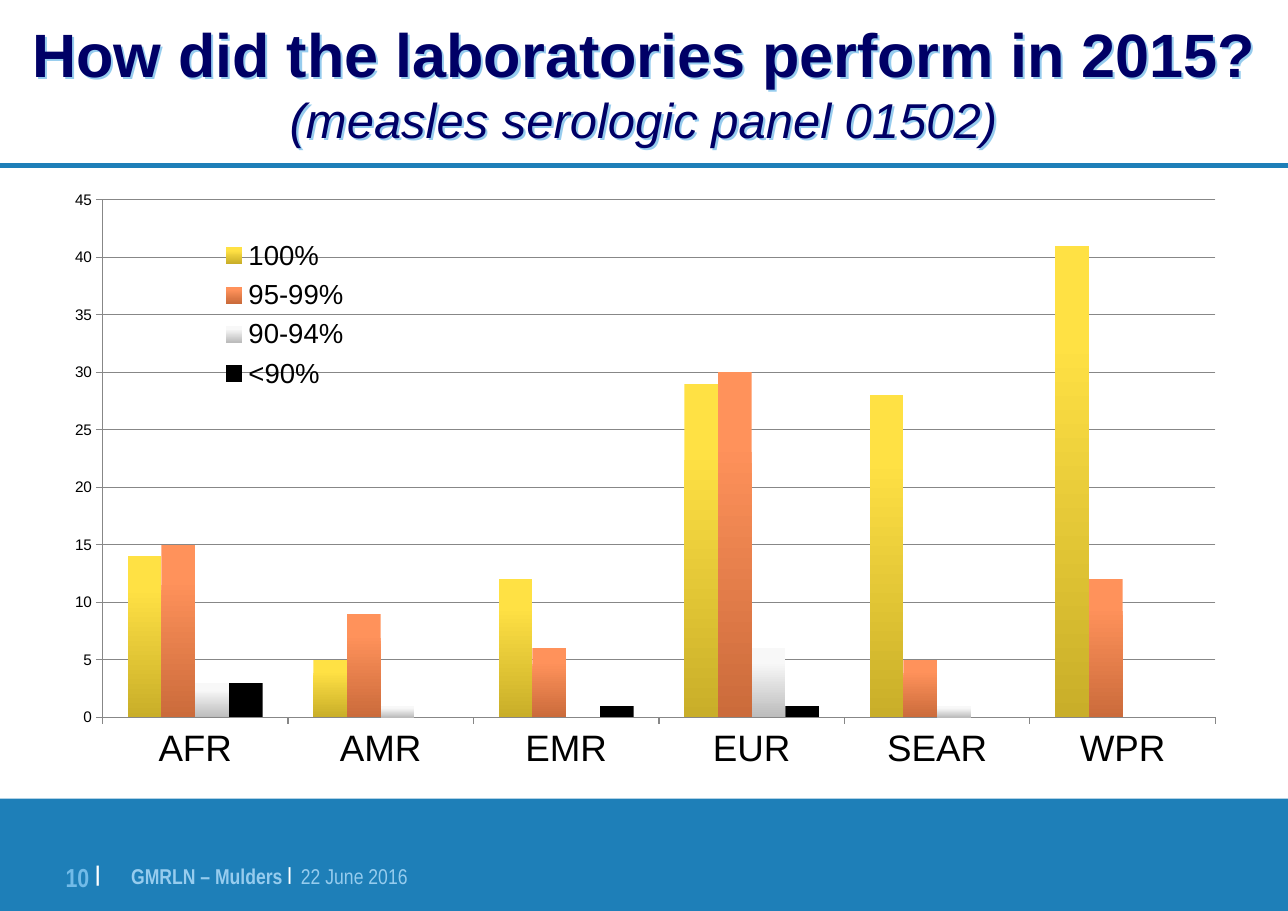
"""Build the slide on 2015 laboratory performance for the measles serologic panel."""
from dataclasses import dataclass, field

from lxml.etree import SubElement
from pptx import Presentation
from pptx.chart.data import CategoryChartData
from pptx.dml.color import RGBColor
from pptx.enum.chart import XL_CHART_TYPE as ChartType, XL_TICK_MARK as TickMark
from pptx.enum.shapes import MSO_CONNECTOR as Connector, MSO_SHAPE as Preset
from pptx.enum.text import MSO_ANCHOR as Anchor, MSO_AUTO_SIZE as AutoSize, PP_ALIGN as Align
from pptx.oxml.ns import qn
from pptx.util import Pt

WIDTH, HEIGHT = 841.68, 595.44
BLUE, PALE_BLUE, NUMBER_BLUE = "1E7FB8", "96CCEE", "72BBE8"
NAVY, WHITE, BLACK, GREY = "000066", "FFFFFF", "000000", "878787"
REGIONS = ["AFR", "AMR", "EMR", "EUR", "SEAR", "WPR"]


@dataclass
class Run:
    text: str
    size: float
    color: str
    raised: int = 0
    style: dict = field(default_factory=dict)


@dataclass
class FooterText:
    box: tuple
    align: Align
    runs: list
    tab: float = 0


@dataclass
class ScoreBand:
    name: str
    counts: list
    top_color: str
    bottom_color: str


NARROW = {"name": "Arial Narrow", "bold": True}
TITLE_RUNS = [
    Run("How did the laboratories perform in 2015?", 40, NAVY, style={"name": "Arial", "bold": True}),
    Run("(measles serologic panel 01502)", 32, NAVY,
        style={"name": "Arial", "bold": False, "italic": True}),
]
FOOTER_TEXTS = [
    FooterText((85.68, 558, 390.96, 37.44), Align.LEFT, [
        Run("GMRLN – Mulders ", 14, PALE_BLUE, style=NARROW),
        Run("|", 20, WHITE, 12, NARROW),
        Run("\t22 June 2016", 14, PALE_BLUE, style=NARROW | {"bold": False}),
    ], tab=111),
    FooterText((33.12, 555.84, 32.4, 28.8), Align.RIGHT, [
        Run("10 ", 17, NUMBER_BLUE, style=NARROW),
        Run("|", 24, WHITE, 14, NARROW),
    ]),
]
SCORE_BANDS = [
    ScoreBand("100%", [14, 5, 12, 29, 28, 41], "FFE144", "C9AE29"),
    ScoreBand("95-99%", [15, 9, 6, 30, 5, 12], "FF925B", "CB6B3B"),
    ScoreBand("90-94%", [3, 1, 0, 6, 1, 0], "F8F8F8", "BCBCBC"),
    ScoreBand("<90%", [3, 0, 1, 1, 0, 0], BLACK, BLACK),
]


def rgb(color: str) -> RGBColor:
    return RGBColor.from_string(color)


def points(*lengths: float) -> list:
    return [Pt(length) for length in lengths]


def set_attributes(target, values: dict) -> None:
    for name, value in values.items():
        setattr(target, name, value)


def add_run(paragraph, item: Run) -> None:
    run = paragraph.add_run()
    run.text = item.text
    set_attributes(run.font, {"size": Pt(item.size), **item.style})
    run.font.color.rgb = rgb(item.color)
    if item.raised:
        run._r.get_or_add_rPr().set("baseline", str(item.raised * 1000))


def clear_margins(frame) -> None:
    set_attributes(frame, {"margin_left": 0, "margin_right": 0, "margin_top": 0,
                           "margin_bottom": 0, "word_wrap": True, "auto_size": AutoSize.NONE})


def place(shape, box: tuple) -> None:
    set_attributes(shape, dict(zip(("left", "top", "width", "height"), points(*box))))


def add_title(slide) -> None:
    title = slide.shapes.title
    place(title, (0, 0, WIDTH, 107.28))
    frame = title.text_frame
    clear_margins(frame)
    frame.vertical_anchor = Anchor.MIDDLE
    paragraph = frame.paragraphs[0]
    paragraph.alignment = Align.CENTER
    heading, subheading = TITLE_RUNS
    add_run(paragraph, heading)
    paragraph.add_line_break()
    add_run(paragraph, subheading)
    effects = SubElement(title._element.spPr, qn("a:effectLst"))
    shadow = SubElement(effects, qn("a:outerShdw"), dist=str(Pt(2)), dir="2700000", algn="ctr")
    SubElement(shadow, qn("a:srgbClr"), val=PALE_BLUE)


def add_bands(slide) -> None:
    rule = slide.shapes.add_connector(Connector.STRAIGHT, *points(0, 108, WIDTH, 108))
    rule.line.color.rgb = rgb(BLUE)
    rule.line.width = Pt(3)
    SubElement(rule._element.spPr, qn("a:effectLst"))
    footer = slide.shapes.add_shape(Preset.RECTANGLE, *points(0, 522, WIDTH, HEIGHT - 522))
    footer.shadow.inherit = False
    footer.fill.solid()
    footer.fill.fore_color.rgb = rgb(BLUE)
    footer.line.fill.background()


def add_footer_text(slide, item: FooterText) -> None:
    frame = slide.shapes.add_textbox(*points(*item.box)).text_frame
    clear_margins(frame)
    paragraph = frame.paragraphs[0]
    paragraph.alignment = item.align
    if item.tab:
        tabs = SubElement(paragraph._p.get_or_add_pPr(), qn("a:tabLst"))
        SubElement(tabs, qn("a:tab"), pos=str(Pt(item.tab)), algn="l")
    for run in item.runs:
        add_run(paragraph, run)


def set_layout(element, index: int, box: tuple, inner: bool = False) -> None:
    for previous in element.findall(qn("c:layout")):
        element.remove(previous)
    layout = SubElement(element, qn("c:layout"))
    element.insert(index, layout)
    manual = SubElement(layout, qn("c:manualLayout"))
    if inner:
        SubElement(manual, qn("c:layoutTarget"), val="inner")
    for tag in ("xMode", "yMode"):
        SubElement(manual, qn(f"c:{tag}"), val="edge")
    for tag, value in zip("xywh", box):
        SubElement(manual, qn(f"c:{tag}"), val=str(value))


def add_chart(slide) -> None:
    data = CategoryChartData()
    data.categories = REGIONS
    for band in SCORE_BANDS:
        data.add_series(band.name, band.counts)
    chart = slide.shapes.add_chart(
        ChartType.COLUMN_CLUSTERED, *points(41.04, 119.52, 763.2, 400.32), data).chart
    set_attributes(chart, {"has_title": False, "has_legend": True})
    set_attributes(chart.font, {"name": "Arial", "size": Pt(10)})
    chart.font.color.rgb = rgb(BLACK)
    plot = chart.plots[0]
    set_attributes(plot, {"gap_width": 150, "overlap": 0, "vary_by_categories": False})
    for series, band in zip(plot.series, SCORE_BANDS):
        series.invert_if_negative = False
        fill = series.format.fill
        fill.gradient()
        fill.gradient_angle = 270
        stops = zip(fill.gradient_stops, (0.2, 1), (band.top_color, band.bottom_color))
        for stop, position, color in stops:
            stop.position = position
            stop.color.rgb = rgb(color)
    values, regions = chart.value_axis, chart.category_axis
    set_attributes(values, {"minimum_scale": 0, "maximum_scale": 45, "major_unit": 5,
                            "has_major_gridlines": True})
    for axis in (values, regions):
        set_attributes(axis, {"major_tick_mark": TickMark.OUTSIDE, "minor_tick_mark": TickMark.NONE})
    for lined in (values, regions, values.major_gridlines):
        lined.format.line.color.rgb = rgb(GREY)
        lined.format.line.width = Pt(0.75)
    regions.tick_labels.font.size = Pt(24)
    chart.legend.include_in_layout = False
    chart.legend.font.size = Pt(18)
    set_layout(chart.legend._element, 1, (0.13, 0.08, 0.12, 0.27))
    plot_area = chart._chartSpace.chart.plotArea
    set_layout(plot_area, 0, (0.034, 0.028, 0.953, 0.845), inner=True)


def main() -> None:
    presentation = Presentation()
    set_attributes(presentation, {"slide_width": Pt(WIDTH), "slide_height": Pt(HEIGHT)})
    slide = presentation.slides.add_slide(presentation.slide_layouts[5])
    add_bands(slide)
    for item in FOOTER_TEXTS:
        add_footer_text(slide, item)
    add_title(slide)
    add_chart(slide)
    presentation.save("out.pptx")


if __name__ == "__main__":
    main()
